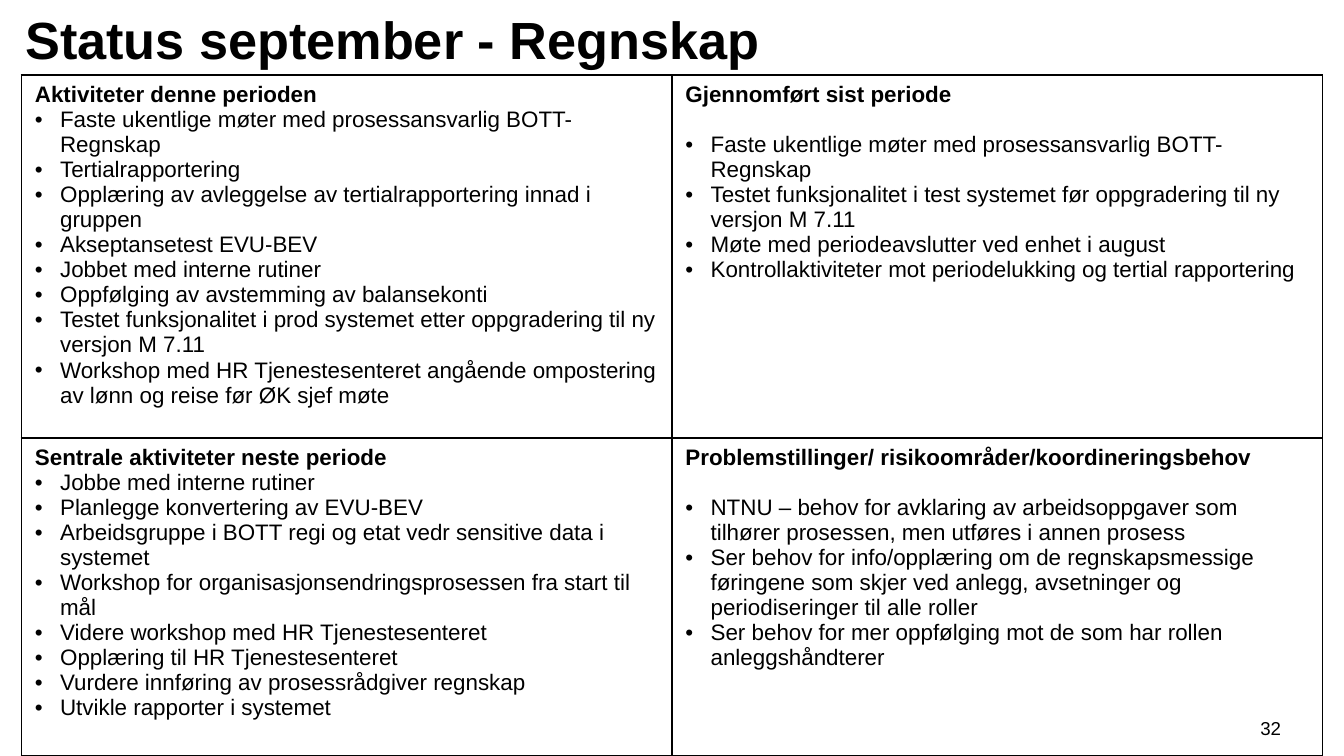
from lxml import etree
from pptx import Presentation
from pptx.dml.color import RGBColor
from pptx.enum.text import MSO_ANCHOR, PP_ALIGN
from pptx.oxml.ns import qn
from pptx.util import Pt

MIDDLE = MSO_ANCHOR.MIDDLE
LEFT = PP_ALIGN.LEFT
CENTER = PP_ALIGN.CENTER

FONT = "Arial"
BLACK = "000000"
BODY_SIZE = 12
LINE_HEIGHT = 13.4
BULLET_INDENT = 13.5
BLANK_LAYOUT = 6

QUADRANTS = [
    [
        ("Aktiviteter denne perioden", 0, [
            "Faste ukentlige møter med prosessansvarlig BOTT-Regnskap",
            "Tertialrapportering",
            "Opplæring av avleggelse av tertialrapportering innad i gruppen",
            "Akseptansetest EVU-BEV",
            "Jobbet med interne rutiner",
            "Oppfølging av avstemming av balansekonti",
            "Testet funksjonalitet i prod systemet etter oppgradering til ny versjon M 7.11",
            "Workshop med HR Tjenestesenteret angående ompostering av lønn og reise før ØK sjef møte",
        ]),
        ("Gjennomført sist periode", LINE_HEIGHT, [
            "Faste ukentlige møter med prosessansvarlig BOTT-Regnskap",
            "Testet funksjonalitet i test systemet før oppgradering til ny versjon M 7.11",
            "Møte med periodeavslutter ved enhet i august",
            "Kontrollaktiviteter mot periodelukking og tertial rapportering",
        ]),
    ],
    [
        ("Sentrale aktiviteter neste periode", 0, [
            "Jobbe med interne rutiner",
            "Planlegge konvertering av EVU-BEV",
            "Arbeidsgruppe i BOTT regi og etat vedr sensitive data i systemet",
            "Workshop for organisasjonsendringsprosessen fra start til mål",
            "Videre workshop med HR Tjenestesenteret",
            "Opplæring til HR Tjenestesenteret",
            "Vurdere innføring av prosessrådgiver regnskap",
            "Utvikle rapporter i systemet",
        ]),
        ("Problemstillinger/ risikoområder/koordineringsbehov", LINE_HEIGHT, [
            "NTNU – behov for avklaring av arbeidsoppgaver som tilhører prosessen, men utføres i annen prosess",
            "Ser behov for info/opplæring om de regnskapsmessige føringene som skjer ved anlegg, "
            "avsetninger og periodiseringer til alle roller",
            "Ser behov for mer oppfølging mot de som har rollen anleggshåndterer",
        ]),
    ],
]


def color(value):
    return RGBColor.from_string(value)


def add_run(paragraph, text, size, bold=False):
    run = paragraph.add_run()
    run.text = text
    run.font.name = FONT
    run.font.size = Pt(size)
    run.font.bold = bold
    run.font.color.rgb = color(BLACK)


def add_label(slide, box, text, size, bold, alignment):
    shape = slide.shapes.add_textbox(*map(Pt, box))
    frame = shape.text_frame
    frame.word_wrap = True
    frame.vertical_anchor = MIDDLE
    paragraph = frame.paragraphs[0]
    paragraph.alignment = alignment
    add_run(paragraph, text, size, bold)


def set_bullet(paragraph):
    properties = paragraph._p.get_or_add_pPr()
    properties.set("marL", str(Pt(BULLET_INDENT)))
    properties.set("indent", str(-Pt(BULLET_INDENT)))
    etree.SubElement(properties, qn("a:buFont"), typeface=FONT)
    etree.SubElement(properties, qn("a:buChar"), char="•")


def set_borders(cell):
    properties = cell._tc.get_or_add_tcPr()
    for side in ("lnL", "lnR", "lnT", "lnB"):
        line = etree.SubElement(properties, qn(f"a:{side}"), w=str(Pt(1)))
        fill = etree.SubElement(line, qn("a:solidFill"))
        etree.SubElement(fill, qn("a:srgbClr"), val=BLACK)


def fill_quadrant(cell, heading, gap, items):
    set_borders(cell)
    cell.fill.background()
    frame = cell.text_frame
    paragraph = frame.paragraphs[0]
    paragraph.space_after = Pt(gap)
    add_run(paragraph, heading, BODY_SIZE, True)
    for item in items:
        paragraph = frame.add_paragraph()
        set_bullet(paragraph)
        add_run(paragraph, item, BODY_SIZE)


def add_status_table(slide, box, row_heights):
    shape = slide.shapes.add_table(len(QUADRANTS), len(QUADRANTS[0]), *map(Pt, box))
    table = shape.table
    table.first_row = False
    table.horz_banding = False
    for row, height, quadrants in zip(table.rows, row_heights, QUADRANTS):
        row.height = Pt(height)
        for cell, quadrant in zip(row.cells, quadrants):
            fill_quadrant(cell, *quadrant)


def main():
    presentation = Presentation()
    presentation.slide_width = Pt(720)
    presentation.slide_height = Pt(405)
    slide = presentation.slides.add_slide(presentation.slide_layouts[BLANK_LAYOUT])
    add_label(slide, (667.5, 379.5, 26.5, 21.5), "32", 10, False, CENTER)
    add_label(slide, (6.5, 0, 660, 41), "Status september - Regnskap", 28, True, LEFT)
    add_status_table(slide, (11.5, 40.2, 697, 359), (188.6, 170.4))
    presentation.save("out.pptx")


if __name__ == "__main__":
    main()
